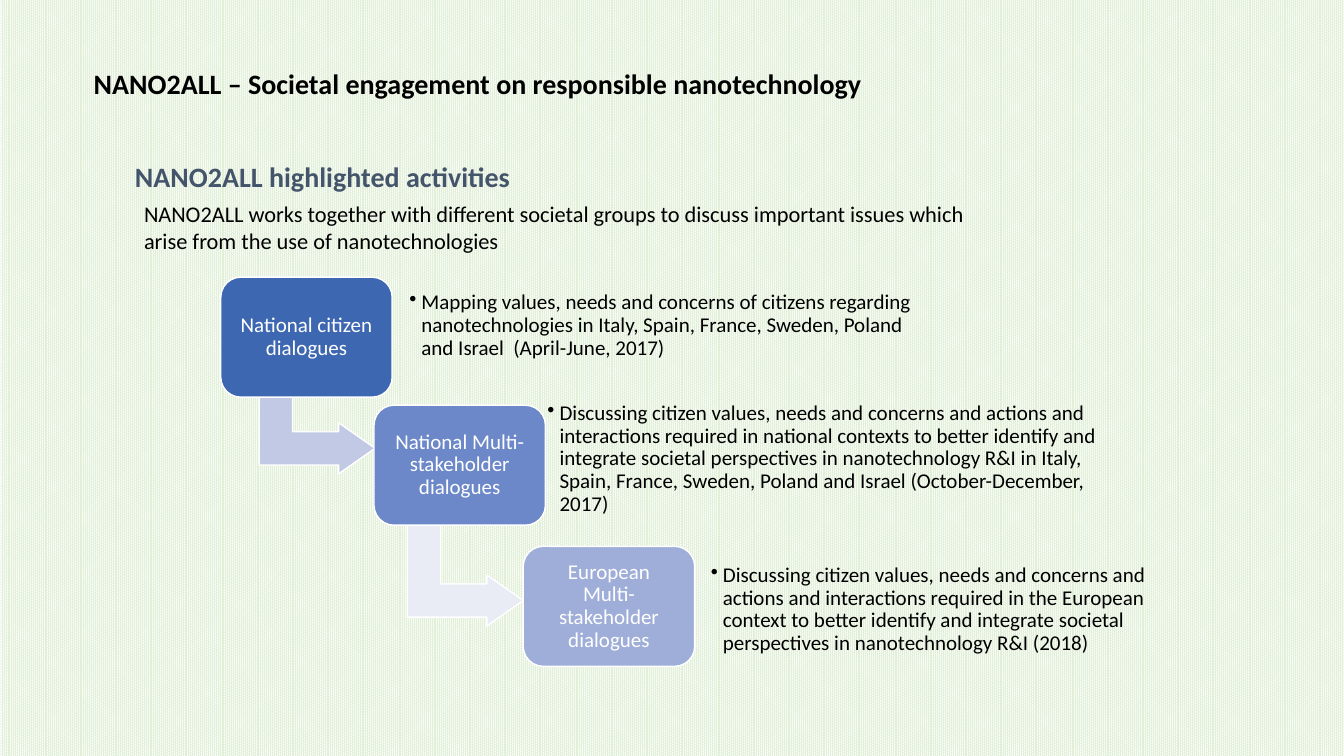
from lxml import etree
from pptx import Presentation
from pptx.dml.color import RGBColor
from pptx.enum.dml import MSO_PATTERN
from pptx.enum.shapes import MSO_SHAPE
from pptx.enum.text import MSO_ANCHOR, PP_ALIGN
from pptx.oxml.ns import qn
from pptx.util import Inches, Pt

ROUNDED, BENT_ARROW = MSO_SHAPE.ROUNDED_RECTANGLE, MSO_SHAPE.BENT_UP_ARROW
PERCENT_90 = MSO_PATTERN.PERCENT_90
TOP, MIDDLE = MSO_ANCHOR.TOP, MSO_ANCHOR.MIDDLE
CENTER = PP_ALIGN.CENTER

THEME = {
    "font": "Calibri",
    "title_size": 20, "intro_size": 16, "step_size": 15,
    "text": "000000", "heading": "44546A", "white": "FFFFFF", "stripe": "E2F0D9",
}

TITLE = "NANO2ALL – Societal engagement on responsible nanotechnology"
HEADING = "NANO2ALL highlighted activities"
INTRO = ("NANO2ALL works together with different societal groups to discuss "
         "important issues which arise from the use of nanotechnologies")

# Places are left, top, width, height; an arrow place is its frame before turning.
STEPS = [
    {"label": "National citizen dialogues",
     "detail": "Mapping values, needs and concerns of citizens regarding nanotechnologies "
               "in Italy, Spain, France, Sweden, Poland and Israel  (April-June, 2017)",
     "card_at": (2.19, 2.75), "card_fill": "3E67B2",
     "detail_place": (4, 2.75, 5.24, 0.96),
     "arrow_at": (2.64, 3.62), "arrow_fill": "C1C9E4"},
    {"label": "National Multi-stakeholder dialogues",
     "detail": "Discussing citizen values, needs and concerns and actions and interactions "
               "required in national contexts to better identify and integrate societal "
               "perspectives in nanotechnology R&I in Italy, Spain, France, Sweden, Poland "
               "and Israel (October-December, 2017)",
     "card_at": (3.71, 4.02), "card_fill": "6C88C8",
     "detail_place": (5.37, 3.94, 5.83, 1.23),
     "arrow_at": (4.11, 5.13), "arrow_fill": "E9EBF5"},
    {"label": "European Multi-stakeholder dialogues",
     "detail": "Discussing citizen values, needs and concerns and actions and interactions "
               "required in the European context to better identify and integrate societal "
               "perspectives in nanotechnology R&I (2018)",
     "card_at": (5.19, 5.42), "card_fill": "9FAED8",
     "detail_place": (6.99, 5.57, 4.94, 0.96)},
]
CARD_SIZE = (1.7, 1.19)
ARROW_SIZE = (1.01, 1.15)
ARROW_ADJUSTMENTS = (0.328, 0.25, 0.358)
BULLET_INDENT = 0.12


def color(name):
    return RGBColor.from_string(THEME.get(name, name))


def write(shape, text, size, font_color, insets, anchor=TOP, bold=False):
    frame = shape.text_frame
    frame.word_wrap = True
    frame.vertical_anchor = anchor
    (frame.margin_left, frame.margin_top,
     frame.margin_right, frame.margin_bottom) = map(Inches, insets)
    paragraph = frame.paragraphs[0]
    paragraph.text = text
    font = paragraph.font
    font.name, font.size, font.bold = THEME["font"], Pt(THEME[size]), bold
    font.color.rgb = color(font_color)
    return paragraph


def add_text(slide, place, *args, **kwargs):
    return write(slide.shapes.add_textbox(*map(Inches, place)), *args, **kwargs)


def add_filled(slide, kind, place, fill):
    shape = slide.shapes.add_shape(kind, *map(Inches, place))
    shape.shadow.inherit = False
    shape.fill.solid()
    shape.fill.fore_color.rgb = color(fill)
    shape.line.color.rgb = color("white")
    shape.line.width = Pt(1)
    return shape


def add_bullet(paragraph):
    properties = paragraph._p.get_or_add_pPr()
    properties.set("marL", str(Inches(BULLET_INDENT)))
    properties.set("indent", str(-Inches(BULLET_INDENT)))
    bullet = etree.Element(qn("a:buChar"), char="•")
    properties.find(qn("a:defRPr")).addprevious(bullet)


def add_step(slide, step):
    if "arrow_at" in step:
        arrow = add_filled(slide, BENT_ARROW, step["arrow_at"] + ARROW_SIZE,
                           step["arrow_fill"])
        arrow.rotation = 90
        for index, value in enumerate(ARROW_ADJUSTMENTS):
            arrow.adjustments[index] = value
    card = add_filled(slide, ROUNDED, step["card_at"] + CARD_SIZE, step["card_fill"])
    label = write(card, step["label"], "step_size", "white", (0.12,) * 4, MIDDLE)
    label.alignment = CENTER
    label.line_spacing = 0.9
    detail = add_text(slide, step["detail_place"], step["detail"], "step_size", "text",
                      (0.06,) * 4, MIDDLE)
    detail.line_spacing = 0.9
    add_bullet(detail)


def main():
    presentation = Presentation()
    presentation.slide_width, presentation.slide_height = Inches(13.33), Inches(7.5)
    slide = presentation.slides.add_slide(presentation.slide_layouts[6])
    background = slide.background.fill
    background.patterned()
    background.pattern = PERCENT_90
    background.fore_color.rgb = color("stripe")
    background.back_color.rgb = color("white")

    for step in STEPS:
        add_step(slide, step)
    insets = (0.1, 0.05, 0.1, 0.05)
    add_text(slide, (1.24, 1.53, 4.08, 0.44), HEADING, "title_size", "heading",
             insets, bold=True)
    add_text(slide, (1.33, 1.94, 8.58, 0.64), INTRO, "intro_size", "text", insets)
    add_text(slide, (0.93, 0.61, 10.37, 0.44), TITLE, "title_size", "text",
             (0, 0.05, 0.1, 0.05), bold=True)
    presentation.save("out.pptx")


if __name__ == "__main__":
    main()
